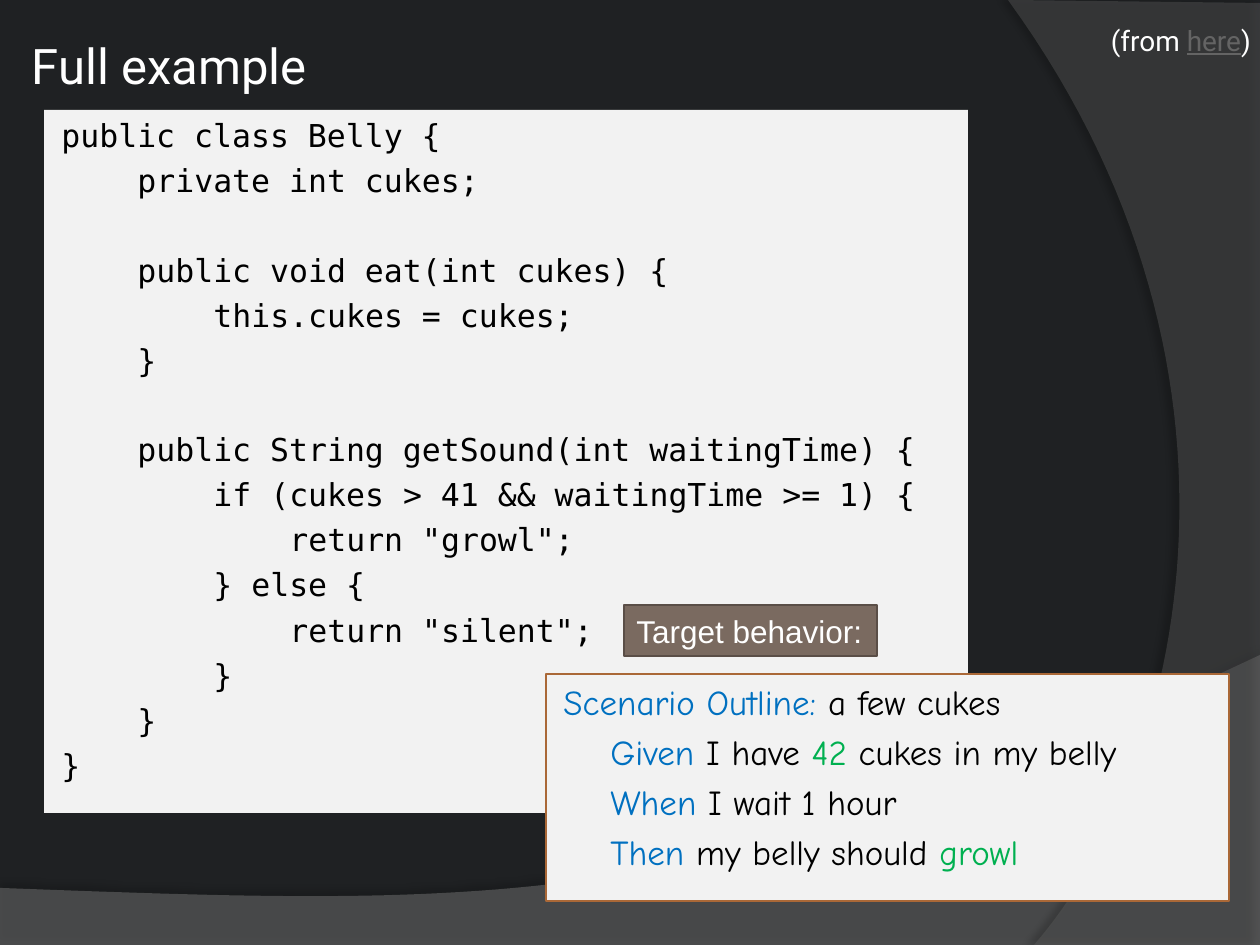
from lxml import etree
from pptx import Presentation
from pptx.dml.color import RGBColor
from pptx.enum.shapes import MSO_SHAPE
from pptx.enum.text import MSO_ANCHOR, PP_ALIGN
from pptx.oxml.ns import qn
from pptx.util import Emu, Pt

RECTANGLE = MSO_SHAPE.RECTANGLE
TOP, MIDDLE = MSO_ANCHOR.TOP, MSO_ANCHOR.MIDDLE
LEFT = PP_ALIGN.LEFT

PX_PER_INCH = 126
CURVE_STEPS = 60
COLORS = {
    "background": "1F2123", "hill": "7F7F7F", "side": "5E5E5E", "shadow": "000000",
    "panel": "F2F2F2", "panel_line": "AA6837", "label": "7A6A60", "label_line": "5A4E47",
    "light": "FFFFFF", "dark": "000000", "link": "646464",
    "keyword": "0070C0", "value": "00B050",
}
CODE = [
    (0, "public class Belly {"),
    (1, "private int cukes;"),
    None,
    (1, "public void eat(int cukes) {"),
    (2, "this.cukes = cukes;"),
    (1, "}"),
    None,
    (1, "public String getSound(int waitingTime) {"),
    (2, "if (cukes > 41 && waitingTime >= 1) {"),
    (3, 'return "growl";'),
    (2, "} else {"),
    (3, 'return "silent";'),
    (2, "}"),
    (1, "}"),
    (0, "}"),
]
SCENARIO = [
    (0, [("Scenario Outline: ", "keyword"), ("a few cukes", "dark")]),
    (1, [("Given ", "keyword"), ("I have ", "dark"), ("42 ", "value"),
         ("cukes in my belly", "dark")]),
    (1, [("When ", "keyword"), ("I wait 1 hour", "dark")]),
    (1, [("Then ", "keyword"), ("my belly should ", "dark"), ("growl", "value")]),
]


def px(length):
    return Emu(round(length * 914400 / PX_PER_INCH))


def rgb(name):
    return RGBColor.from_string(COLORS[name])


def style_run(run, font, size, color):
    run.font.name = font
    run.font.size = Pt(size)
    run.font.color.rgb = rgb(color)


def add_runs(paragraph, parts, font, size):
    for text, color in parts:
        run = paragraph.add_run()
        run.text = text
        style_run(run, font, size, color)


def indent(paragraph, length):
    properties = paragraph._p.get_or_add_pPr()
    properties.set("marL", str(px(length)))
    properties.set("indent", "0")


def set_margins(frame, margin):
    frame.margin_left = frame.margin_right = margin
    frame.margin_top = frame.margin_bottom = margin


def curve(start, control_1, control_2, end):
    points = []
    for step in range(1, CURVE_STEPS + 1):
        t = step / CURVE_STEPS
        weights = ((1 - t) ** 3, 3 * t * (1 - t) ** 2, 3 * t * t * (1 - t), t ** 3)
        anchors = (start, control_1, control_2, end)
        points.append(tuple(sum(w * a[axis] for w, a in zip(weights, anchors))
                            for axis in (0, 1)))
    return points


def add_swoosh(slide, box, points, color, opacity, shadow_opacity, distance, angle):
    left, top = box
    outline = [(px(left + x), px(top + y)) for x, y in points]
    builder = slide.shapes.build_freeform(*outline[0], scale=1.0)
    builder.add_line_segments(outline[1:], close=True)
    swoosh = builder.convert_to_shape()
    swoosh.fill.solid()
    swoosh.fill.fore_color.rgb = rgb(color)
    swoosh.line.fill.background()
    swoosh.shadow.inherit = False
    properties = swoosh._element.spPr
    fill_color = properties.find(qn("a:solidFill")).find(qn("a:srgbClr"))
    etree.SubElement(fill_color, qn("a:alpha"), val=str(opacity * 1000))
    shadow = etree.SubElement(
        properties.find(qn("a:effectLst")), qn("a:outerShdw"), blurRad=str(Pt(4)),
        dist=str(Pt(distance)), dir=str(angle * 60000), rotWithShape="0")
    shadow_color = etree.SubElement(shadow, qn("a:srgbClr"), val=COLORS["shadow"])
    etree.SubElement(shadow_color, qn("a:alpha"), val=str(shadow_opacity * 1000))


def add_backdrop(slide):
    slide.background.fill.solid()
    slide.background.fill.fore_color.rgb = rgb("background")
    hill = [(0, 233), (0, 291), (1260, 291), (1260, 0)]
    hill += curve((1260, 0), (704, 263), (493, 251), (0, 233))
    add_swoosh(slide, (0, 655), hill, "hill", 45, 35, 3.5, 270)
    side = [(252, 3), (252, 945), (26, 945)]
    side += curve((26, 945), (170, 780), (275, 378), (0, 0))
    add_swoosh(slide, (1008, 0), side, "side", 40, 45, 4, 180)


def add_title(slide, box):
    title = slide.shapes.title
    slide.shapes._spTree.append(title._element)
    title.left, title.top, title.width, title.height = map(px, box)
    frame = title.text_frame
    frame.text = "Full example"
    frame.vertical_anchor = MIDDLE
    set_margins(frame, px(6))
    frame.paragraphs[0].alignment = LEFT
    style_run(frame.paragraphs[0].runs[0], "Roboto", 28, "light")


def add_panel(slide, box, fill, line=None, line_width=0.75):
    panel = slide.shapes.add_shape(RECTANGLE, *map(px, box))
    panel.shadow.inherit = False
    panel.fill.solid()
    panel.fill.fore_color.rgb = rgb(fill)
    if line:
        panel.line.color.rgb = rgb(line)
        panel.line.width = Pt(line_width)
    else:
        panel.line.fill.background()
    return panel.text_frame


def fill_lines(frame, lines, font, size, step, gap, line_height):
    frame.word_wrap = True
    frame.vertical_anchor = TOP
    paragraph = None
    skipped = 0
    for line in lines:
        if line is None:
            skipped += 1
            continue
        level, parts = line
        paragraph = frame.add_paragraph() if paragraph else frame.paragraphs[0]
        paragraph.alignment = LEFT
        paragraph.space_before = Pt(gap + skipped * line_height)
        indent(paragraph, 5 + level * step)
        add_runs(paragraph, parts, font, size)
        skipped = 0


def add_code(slide, box):
    lines = [line and (line[0], [(line[1], "dark")]) for line in CODE]
    frame = add_panel(slide, box, "panel")
    fill_lines(frame, lines, "DejaVu Sans Mono", 18, 76, 4.2, 25.2)


def add_scenario(slide, box):
    frame = add_panel(slide, box, "panel", "panel_line")
    fill_lines(frame, SCENARIO, "Comic Neue", 20, 47, 4.7, 28)


def add_source_note(slide, box):
    frame = slide.shapes.add_textbox(*map(px, box)).text_frame
    frame.word_wrap = True
    frame.vertical_anchor = MIDDLE
    set_margins(frame, px(6))
    paragraph = frame.paragraphs[0]
    add_runs(paragraph, [("(from ", "light"), ("here", "link"), (")", "light")], "Roboto", 16)
    paragraph.runs[1].font.underline = True


def add_label(slide, box):
    frame = add_panel(slide, box, "label", "label_line", 1.5)
    frame.text = "Target behavior:"
    frame.word_wrap = False
    frame.vertical_anchor = MIDDLE
    style_run(frame.paragraphs[0].runs[0], "Arial", 18, "light")


def main():
    deck = Presentation()
    deck.slide_width, deck.slide_height = px(1260), px(945)
    slide = deck.slides.add_slide(deck.slide_layouts[5])
    add_backdrop(slide)
    add_title(slide, (26, 21, 456, 88))
    add_code(slide, (44, 110, 924, 703))
    add_scenario(slide, (546, 674, 683, 227))
    add_source_note(slide, (1105, -4, 155, 88))
    add_label(slide, (624, 605, 253, 51))
    deck.save("out.pptx")


if __name__ == "__main__":
    main()
